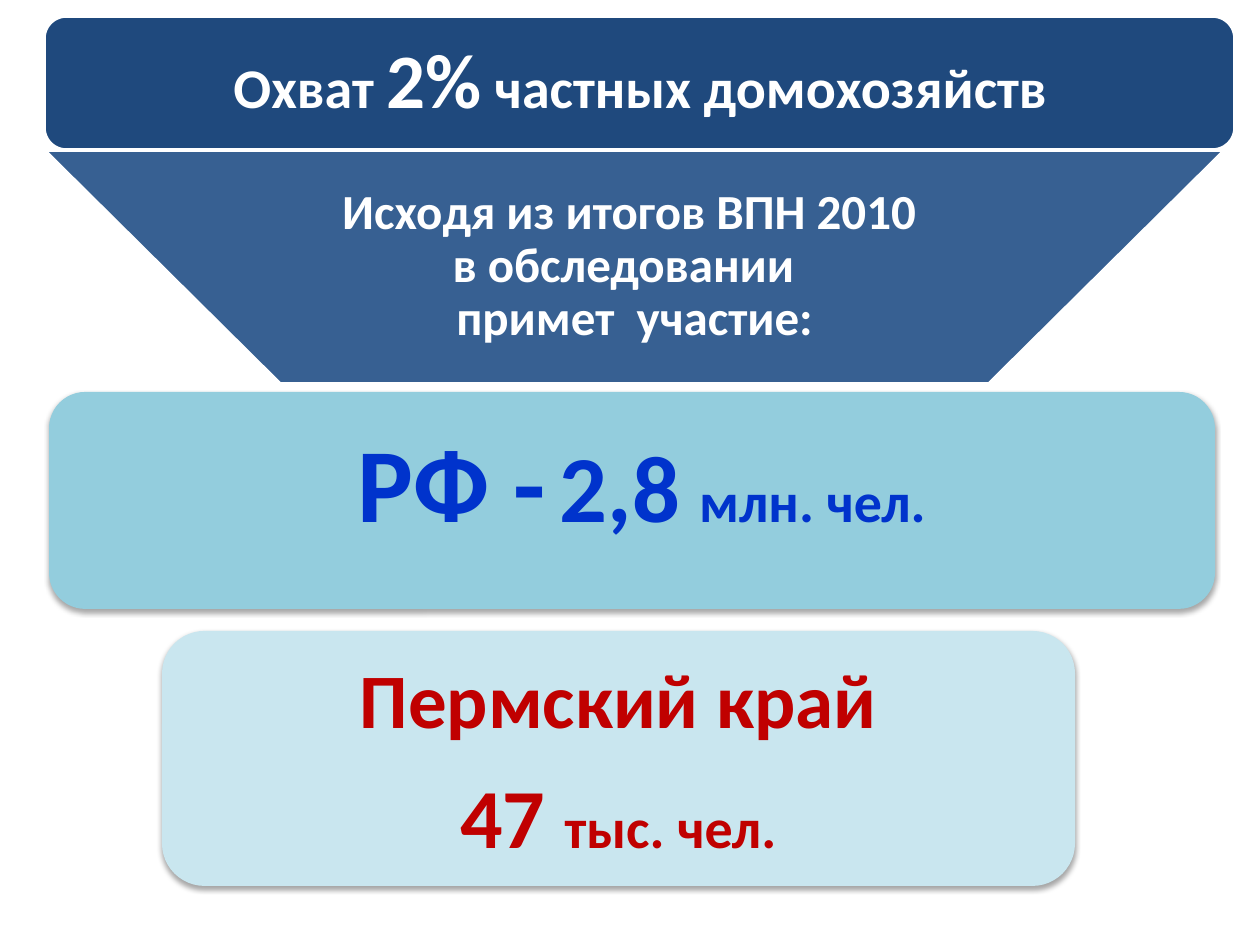
from lxml.etree import SubElement
from pptx import Presentation
from pptx.dml.color import RGBColor
from pptx.enum.shapes import MSO_SHAPE as SHAPE
from pptx.enum.text import MSO_ANCHOR, MSO_AUTO_SIZE, PP_ALIGN
from pptx.oxml.ns import qn
from pptx.util import Inches, Pt

THEME = {
    "font": "Calibri", "white": "FFFFFF", "navy": "1F497D", "steel": "376092",
    "aqua": "93CDDD", "pale": "C9E6EF", "blue": "0033CC", "red": "C00000",
    "small": 28, "unit": 32, "space": 36, "large": 44, "figure": 48,
    "total": 54, "country": 60,
}
SCALE = Inches(1) / 126

# Each paragraph is a list of (text, size) runs.
TITLE = [[("Охват ", "unit"), ("2%", "large"), (" частных домохозяйств", "unit")]]
TITLE_BOX = (47, 23, 1187, 121)
# Insets are left, top, right, bottom.
PANELS = [
    dict(shape=SHAPE.ROUNDED_RECTANGLE, box=(44, 16, 1191, 134), fill="navy"),
    dict(shape=SHAPE.FLOWCHART_MANUAL_OPERATION, box=(44, 150, 1181, 234), fill="steel",
         text=[[("Исходя из итогов ВПН 2010 \nв обследовании  \nпримет  участие:", "small")]],
         style=dict(color="white", insets=(15, 8, 15, 8))),
    dict(shape=SHAPE.ROUNDED_RECTANGLE, box=(49, 392, 1166, 217), fill="aqua", raised=True,
         text=[[("РФ -", "country"), (" ", "space"), ("2,8", "total"),
                (" ", "figure"), ("млн. чел.", "unit")]],
         style=dict(color="blue", insets=(45, 13, 25, 36))),
    dict(shape=SHAPE.ROUNDED_RECTANGLE, box=(162, 631, 913, 255), fill="pale", raised=True,
         text=[[("Пермский край", "large")], [("47 ", "figure"), ("тыс. чел.", "unit")]],
         style=dict(color="red", insets=(25, 13, 25, 23), spacing=1.1, after=6)),
]


def px(n):
    return round(n * SCALE)


def color(name):
    return RGBColor.from_string(THEME[name])


def write(tf, paragraphs, color_name, insets, spacing=0.9, after=0):
    tf.word_wrap = True
    tf.auto_size = MSO_AUTO_SIZE.NONE
    tf.vertical_anchor = MSO_ANCHOR.MIDDLE
    tf.margin_left, tf.margin_top, tf.margin_right, tf.margin_bottom = map(px, insets)
    for i, runs in enumerate(paragraphs):
        p = tf.add_paragraph() if i else tf.paragraphs[0]
        p.alignment = PP_ALIGN.CENTER
        p.line_spacing, p.space_after = spacing, Pt(after)
        for text, size in runs:
            for j, line in enumerate(text.split("\n")):
                if j:
                    p.add_line_break()
                r = p.add_run()
                r.text = line
                r.font.name, r.font.bold = THEME["font"], True
                r.font.size = Pt(THEME[size])
                r.font.color.rgb = color(color_name)


def add_shadow(sp):
    effects = sp._element.spPr.find(qn("a:effectLst"))
    shadow = SubElement(effects, qn("a:outerShdw"), blurRad=str(Pt(3.1)),
                        dist=str(Pt(1.8)), dir="5400000", rotWithShape="0")
    black = SubElement(shadow, qn("a:srgbClr"), val="000000")
    SubElement(black, qn("a:alpha"), val="35000")


def add_panel(s, shape, box, fill, raised=False, text=None, style=None):
    sp = s.shapes.add_shape(shape, *map(px, box))
    sp.fill.solid()
    sp.fill.fore_color.rgb = color(fill)
    sp.shadow.inherit = False
    if raised:
        sp.line.fill.background()
        add_shadow(sp)
    else:
        sp.line.color.rgb = color("white")
        sp.line.width = Pt(2)
    if text:
        options = dict(style)
        write(sp.text_frame, text, options.pop("color"), **options)


def main():
    prs = Presentation()
    prs.slide_width, prs.slide_height = Inches(10), Inches(7.5)
    s = prs.slides.add_slide(prs.slide_layouts[5])
    for panel in PANELS:
        add_panel(s, **panel)

    title = s.shapes.title
    title.left, title.top, title.width, title.height = map(px, TITLE_BOX)
    write(title.text_frame, TITLE, "white", insets=(16, 9, 16, 9))
    # The title goes in front of its banner.
    title._element.getparent().append(title._element)
    prs.save("out.pptx")


if __name__ == "__main__":
    main()
